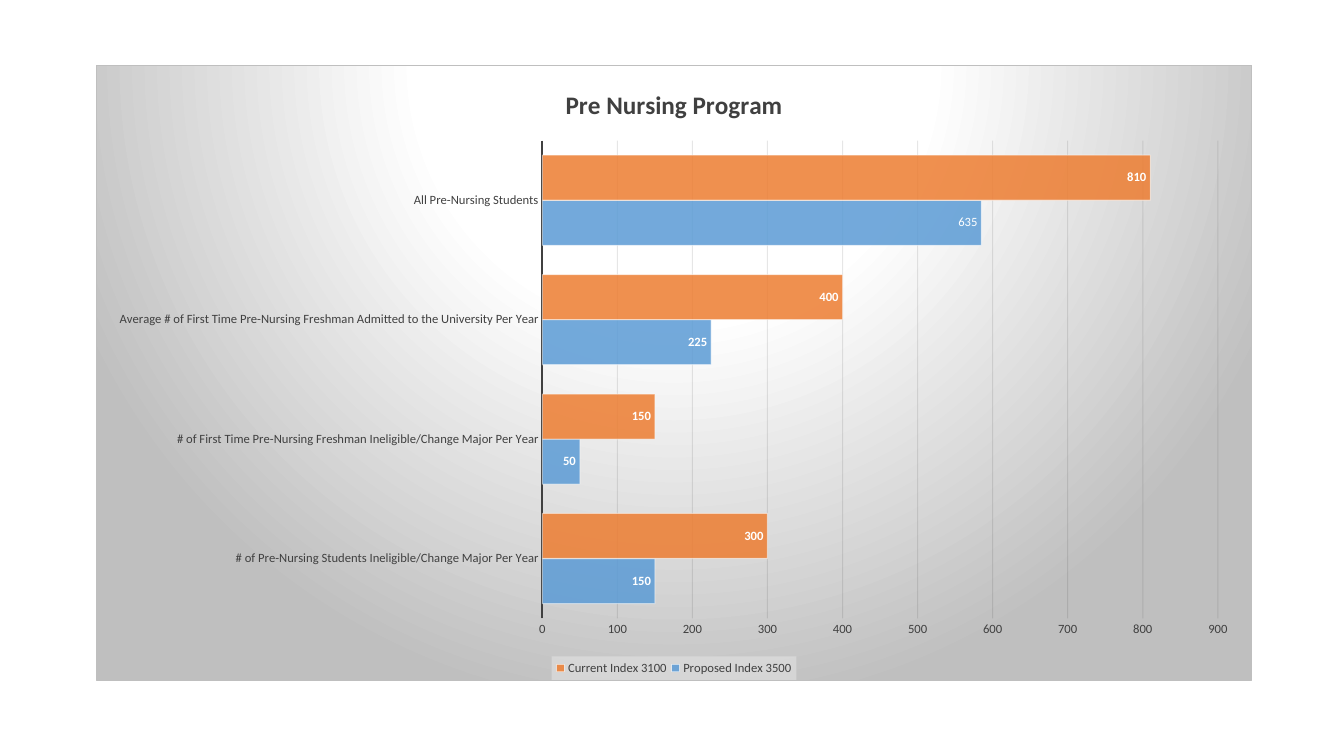
from lxml.etree import SubElement
from pptx import Presentation
from pptx.chart.data import CategoryChartData
from pptx.dml.color import RGBColor
from pptx.enum.chart import XL_CHART_TYPE, XL_LABEL_POSITION, XL_LEGEND_POSITION, XL_TICK_MARK
from pptx.oxml import parse_xml
from pptx.oxml.ns import nsdecls, qn
from pptx.util import Cm, Pt

TITLE = "Pre Nursing Program"
CATEGORIES = [
    "# of Pre-Nursing Students Ineligible/Change Major Per Year",
    "# of First Time Pre-Nursing Freshman Ineligible/Change Major Per Year",
    "Average # of First Time Pre-Nursing Freshman Admitted to the University Per Year",
    "All Pre-Nursing Students",
]
SERIES = [
    ("Proposed Index 3500", (150, 50, 225, 585), "5B9BD5"),
    ("Current Index 3100", (300, 150, 400, 810), "ED7D31"),
]
CUSTOM_LABEL = {"series": 0, "point": 3, "text": "635"}
FRAME = (Cm(2.42), Cm(1.64), Cm(29.13), Cm(15.52))
PLOT_LAYOUT = {"x": 0.386, "y": 0.122, "w": 0.585, "h": 0.777}
LEGEND_LAYOUT = {"x": 0.394, "y": 0.961, "w": 0.212, "h": 0.038}
GRADIENT = [(0, "FFFFFF"), (39, "FFFFFF"), (100, "BFBFBF")]

THEME = {
    "font": "Calibri", "title": 18, "small": 9, "base": 10,
    "text": "404040", "white": "FFFFFF", "black": "000000",
    "grid": "0D0D0D", "border": "BFBFBF", "legend": "F2F2F2",
}


def style_font(font, size=THEME["small"], color=THEME["text"], bold=False):
    font.name = THEME["font"]
    font.size = Pt(size)
    font.bold = bold
    font.color.rgb = RGBColor.from_string(color)


def write_text(frame, text, **style):
    paragraph = frame.paragraphs[0]
    span = paragraph.add_run()
    span.text = text
    style_font(span.font, **style)


def solid(fill, color, opacity=100):
    fill.solid()
    fill.fore_color.rgb = RGBColor.from_string(color)
    if opacity < 100:
        for node in fill._xPr.iter(qn("a:srgbClr")):
            if node.get("val") == color and len(node) == 0:
                SubElement(node, qn("a:alpha")).set("val", str(opacity * 1000))


def outline(line, color, width, opacity=100):
    line.width = Pt(width)
    solid(line.fill, color, opacity)


def layout_element(target, **box):
    rows = [f'<c:{key}Mode val="edge"/>' for key in "xy"]
    rows += [f'<c:{key} val="{value}"/>' for key, value in box.items()]
    inner = '<c:layoutTarget val="inner"/>' if target == "inner" else ""
    return parse_xml(f'<c:layout {nsdecls("c")}><c:manualLayout>{inner}{"".join(rows)}'
                     "</c:manualLayout></c:layout>")


def paint_background(chart):
    stops = "".join(f'<a:gs pos="{position * 1000}"><a:srgbClr val="{color}"/></a:gs>'
                    for position, color in GRADIENT)
    chart._chartSpace.find(qn("c:chart")).addnext(parse_xml(
        f'<c:spPr {nsdecls("c", "a")}><a:gradFill><a:gsLst>{stops}</a:gsLst>'
        '<a:path path="circle"><a:fillToRect l="50000" t="-80000" r="50000" b="180000"/></a:path>'
        f'</a:gradFill><a:ln w="{Pt(0.75)}"><a:solidFill><a:srgbClr val="{THEME["border"]}"/>'
        "</a:solidFill></a:ln></c:spPr>"))


def format_axes(chart):
    for axis in (chart.category_axis, chart.value_axis):
        axis.major_tick_mark = axis.minor_tick_mark = XL_TICK_MARK.NONE
        style_font(axis.tick_labels.font)
    outline(chart.category_axis.format.line, THEME["text"], 1.5)
    values = chart.value_axis
    values.minimum_scale, values.maximum_scale, values.major_unit = 0, 900, 100
    values.format.line.fill.background()
    values.has_major_gridlines = True
    outline(values.major_gridlines.format.line, THEME["grid"], 0.75, 10)


def format_series(plot):
    plot.gap_width = 65
    plot.overlap = 0
    plot.vary_by_categories = False
    for series, (_, _, color) in zip(plot.series, SERIES):
        solid(series.format.fill, color, 85)
        outline(series.format.line, THEME["white"], 0.75, 50)
        labels = series.data_labels
        labels.show_value = True
        labels.position = XL_LABEL_POSITION.INSIDE_END
        style_font(labels.font, color=THEME["white"], bold=True)
    label = plot.series[CUSTOM_LABEL["series"]].points[CUSTOM_LABEL["point"]].data_label
    write_text(label.text_frame, CUSTOM_LABEL["text"], color=THEME["white"])
    label.position = XL_LABEL_POSITION.INSIDE_END


def format_legend(chart):
    chart.has_legend = True
    legend = chart.legend
    legend.position = XL_LEGEND_POSITION.BOTTOM
    legend.include_in_layout = False
    style_font(legend.font)
    element = legend._element
    for old in element.findall(qn("c:layout")):
        element.remove(old)
    element.find(qn("c:legendPos")).addnext(layout_element("outer", **LEGEND_LAYOUT))
    element.find(qn("c:overlay")).addnext(parse_xml(
        f'<c:spPr {nsdecls("c", "a")}><a:solidFill><a:srgbClr val="{THEME["legend"]}">'
        '<a:alpha val="39000"/></a:srgbClr></a:solidFill></c:spPr>'))


def add_program_chart(page):
    data = CategoryChartData()
    data.categories = CATEGORIES
    for name, values, _ in SERIES:
        data.add_series(name, values)
    chart = page.shapes.add_chart(XL_CHART_TYPE.BAR_CLUSTERED, *FRAME, data).chart
    style_font(chart.font, size=THEME["base"], color=THEME["black"])
    chart.has_title = True
    write_text(chart.chart_title.text_frame, TITLE, size=THEME["title"], bold=True)
    chart.chart_title.include_in_layout = False
    paint_background(chart)
    format_axes(chart)
    format_series(chart.plots[0])
    format_legend(chart)
    area = chart._chartSpace.find(qn("c:chart")).find(qn("c:plotArea"))
    for old in area.findall(qn("c:layout")):
        area.remove(old)
    area.insert(0, layout_element("inner", **PLOT_LAYOUT))


def main():
    deck = Presentation()
    deck.slide_width, deck.slide_height = Cm(33.87), Cm(19.05)
    page = deck.slides.add_slide(deck.slide_layouts[6])
    add_program_chart(page)
    deck.save("out.pptx")


if __name__ == "__main__":
    main()
